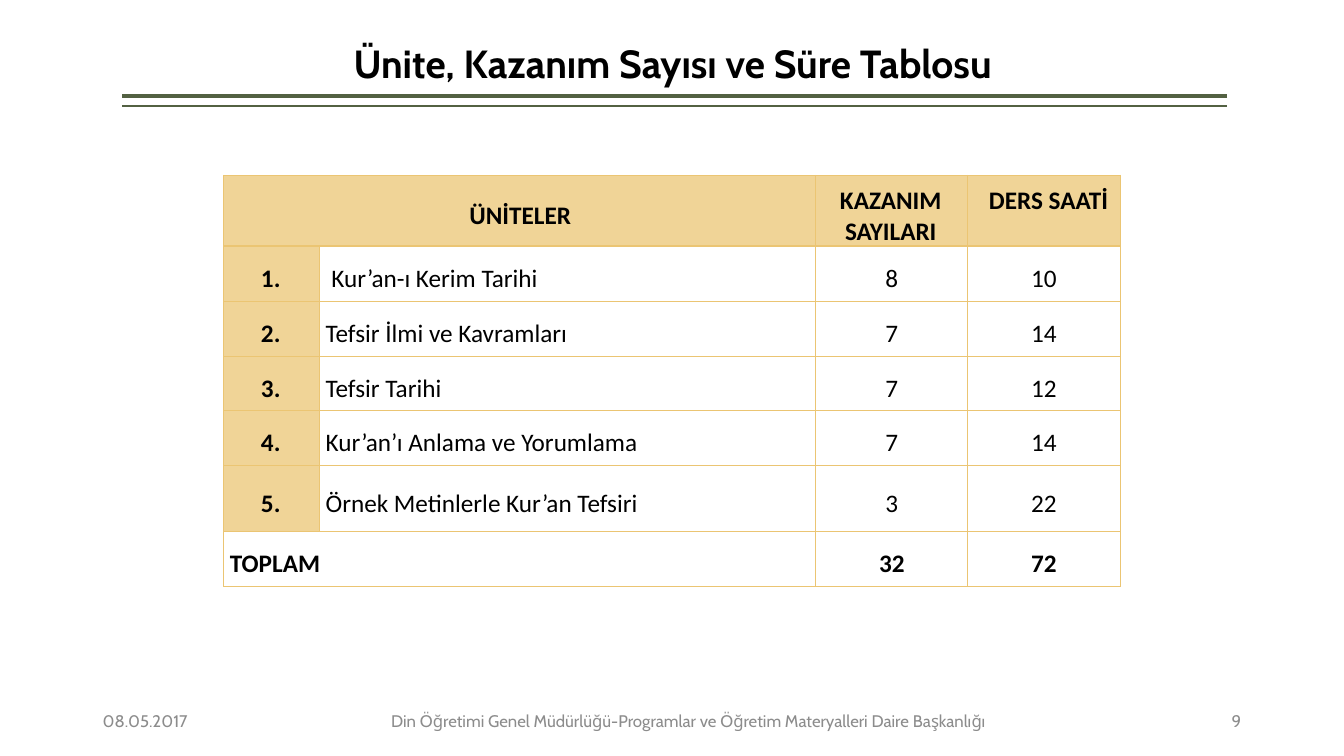
from dataclasses import dataclass
from typing import Any

from lxml import etree
from pptx import Presentation
from pptx.dml.color import RGBColor
from pptx.enum.shapes import MSO_CONNECTOR
from pptx.enum.text import MSO_ANCHOR, PP_ALIGN
from pptx.oxml.ns import qn
from pptx.util import Inches, Pt

LEFT, CENTER, RIGHT = PP_ALIGN.LEFT, PP_ALIGN.CENTER, PP_ALIGN.RIGHT
TOP, MIDDLE = MSO_ANCHOR.TOP, MSO_ANCHOR.MIDDLE
STRAIGHT = MSO_CONNECTOR.STRAIGHT


@dataclass(frozen=True)
class Theme:
    heading_font: str = "Cabin"
    table_font: str = "Calibri"
    ink: str = "000000"
    muted: str = "8C8C8C"
    rule: str = "536142"
    sand: str = "F0D497"
    border: str = "EBC573"
    paper: str = "FFFFFF"
    title_size: int = 28
    table_size: int = 18
    footer_size: int = 12


@dataclass(frozen=True)
class Label:
    text: str
    left: float
    top: float
    width: float
    height: float
    size: int
    color: str
    align: PP_ALIGN
    bold: bool = False
    line_spacing: float = 1.0


@dataclass(frozen=True)
class Rule:
    y: float
    weight: float


@dataclass(frozen=True)
class Unit:
    name: str
    outcomes: int
    hours: int


@dataclass(frozen=True)
class CellStyle:
    align: PP_ALIGN = CENTER
    bold: bool = False
    shaded: bool = False
    anchor: MSO_ANCHOR = MIDDLE
    indent: float = 0.0


THEME = Theme()
RULES = [Rule(0.95, 3), Rule(1.05, 1)]
LABELS = [
    Label("Ünite, Kazanım Sayısı ve Süre Tablosu", 1.21, 0.05, 10.92, 1.2,
          THEME.title_size, THEME.ink, CENTER, bold=True, line_spacing=0.9),
    Label("08.05.2017", 0.92, 6.95, 1.25, 0.4,
          THEME.footer_size, THEME.muted, LEFT),
    Label("Din Öğretimi Genel Müdürlüğü-Programlar ve Öğretim Materyalleri Daire Başkanlığı",
          2.21, 6.95, 9.24, 0.4, THEME.footer_size, THEME.muted, CENTER),
    Label("9", 11.71, 6.95, 0.7, 0.4, THEME.footer_size, THEME.muted, RIGHT),
]
UNITS = [
    Unit(" Kur’an-ı Kerim Tarihi", 8, 10),
    Unit("Tefsir İlmi ve Kavramları", 7, 14),
    Unit("Tefsir Tarihi", 7, 12),
    Unit("Kur’an’ı Anlama ve Yorumlama", 7, 14),
    Unit("Örnek Metinlerle Kur’an Tefsiri", 3, 22),
]
COLUMN_WIDTHS = [0.95, 4.92, 1.51, 1.51]
ROW_HEIGHTS = [0.6, 0.55, 0.55, 0.53, 0.55, 0.65, 0.55]

UNITS_HEADER = CellStyle(bold=True, shaded=True, indent=0.03)
OUTCOMES_HEADER = CellStyle(bold=True, shaded=True, anchor=TOP)
HOURS_HEADER = CellStyle(bold=True, shaded=True, anchor=TOP, indent=0.11)
NUMBER = CellStyle(bold=True, shaded=True)
NAME = CellStyle(align=LEFT)
COUNT = CellStyle(indent=0.02)
TOTAL_NAME = CellStyle(align=LEFT, bold=True)
TOTAL_COUNT = CellStyle(bold=True, indent=0.02)


def set_font(paragraph: Any, family: str, size: int, color: str, bold: bool) -> None:
    font = paragraph.font
    font.name, font.size, font.bold = family, Pt(size), bold
    font.color.rgb = RGBColor.from_string(color)


def add_label(slide: Any, label: Label) -> None:
    box = slide.shapes.add_textbox(Inches(label.left), Inches(label.top),
                                   Inches(label.width), Inches(label.height))
    frame = box.text_frame
    frame.word_wrap = True
    frame.vertical_anchor = MIDDLE
    paragraph = frame.paragraphs[0]
    paragraph.text = label.text
    paragraph.alignment = label.align
    paragraph.line_spacing = label.line_spacing
    set_font(paragraph, THEME.heading_font, label.size, label.color, label.bold)


def add_rule(slide: Any, rule: Rule) -> None:
    line = slide.shapes.add_connector(STRAIGHT, Inches(12.17), Inches(rule.y),
                                      Inches(1.21), Inches(rule.y))
    line.line.color.rgb = RGBColor.from_string(THEME.rule)
    line.line.width = Pt(rule.weight)
    etree.SubElement(line._element.spPr, qn("a:effectLst"))


def add_borders(cell: Any) -> None:
    properties = cell._tc.get_or_add_tcPr()
    for position, side in enumerate(("lnL", "lnR", "lnT", "lnB")):
        line = etree.Element(qn(f"a:{side}"), w=str(Pt(1)))
        fill = etree.SubElement(line, qn("a:solidFill"))
        etree.SubElement(fill, qn("a:srgbClr"), val=THEME.border)
        properties.insert(position, line)


def fill_cell(cell: Any, text: str, style: CellStyle) -> None:
    cell.margin_left, cell.margin_top = Inches(0.06), Inches(0.1)
    cell.margin_right, cell.margin_bottom = Inches(0.08), Inches(0)
    cell.vertical_anchor = style.anchor
    paragraph = cell.text_frame.paragraphs[0]
    paragraph.text = text
    paragraph.alignment = style.align
    if style.indent:
        paragraph._p.get_or_add_pPr().set("marL", str(Inches(style.indent)))
    set_font(paragraph, THEME.table_font, THEME.table_size, THEME.ink, style.bold)
    cell.fill.solid()
    cell.fill.fore_color.rgb = RGBColor.from_string(
        THEME.sand if style.shaded else THEME.paper)


def add_unit_table(slide: Any) -> None:
    table = slide.shapes.add_table(
        len(ROW_HEIGHTS), len(COLUMN_WIDTHS), Inches(2.22), Inches(1.74),
        Inches(sum(COLUMN_WIDTHS)), Inches(sum(ROW_HEIGHTS))).table
    table.first_row = table.horz_banding = False
    for column, width in zip(table.columns, COLUMN_WIDTHS):
        column.width = Inches(width)
    for row, height in zip(table.rows, ROW_HEIGHTS):
        row.height = Inches(height)

    # Header and total rows join the number and name columns
    total_row = len(UNITS) + 1
    for row_index in (0, total_row):
        table.cell(row_index, 0).merge(table.cell(row_index, 1))

    fill_cell(table.cell(0, 0), "ÜNİTELER", UNITS_HEADER)
    fill_cell(table.cell(0, 2), "KAZANIM SAYILARI", OUTCOMES_HEADER)
    fill_cell(table.cell(0, 3), "DERS SAATİ", HOURS_HEADER)

    for number, unit in enumerate(UNITS, start=1):
        fill_cell(table.cell(number, 0), f"{number}.", NUMBER)
        fill_cell(table.cell(number, 1), unit.name, NAME)
        fill_cell(table.cell(number, 2), str(unit.outcomes), COUNT)
        fill_cell(table.cell(number, 3), str(unit.hours), COUNT)

    fill_cell(table.cell(total_row, 0), "TOPLAM", TOTAL_NAME)
    fill_cell(table.cell(total_row, 2), str(sum(u.outcomes for u in UNITS)), TOTAL_COUNT)
    fill_cell(table.cell(total_row, 3), str(sum(u.hours for u in UNITS)), TOTAL_COUNT)

    for cell in table.iter_cells():
        add_borders(cell)


def main() -> None:
    deck = Presentation()
    deck.slide_width, deck.slide_height = Inches(13.33), Inches(7.5)
    slide = deck.slides.add_slide(deck.slide_layouts[6])

    # Double rule under the title
    for rule in RULES:
        add_rule(slide, rule)

    # Title and footer
    for label in LABELS:
        add_label(slide, label)

    # Units with outcome counts and lesson hours
    add_unit_table(slide)
    deck.save("out.pptx")


if __name__ == "__main__":
    main()
